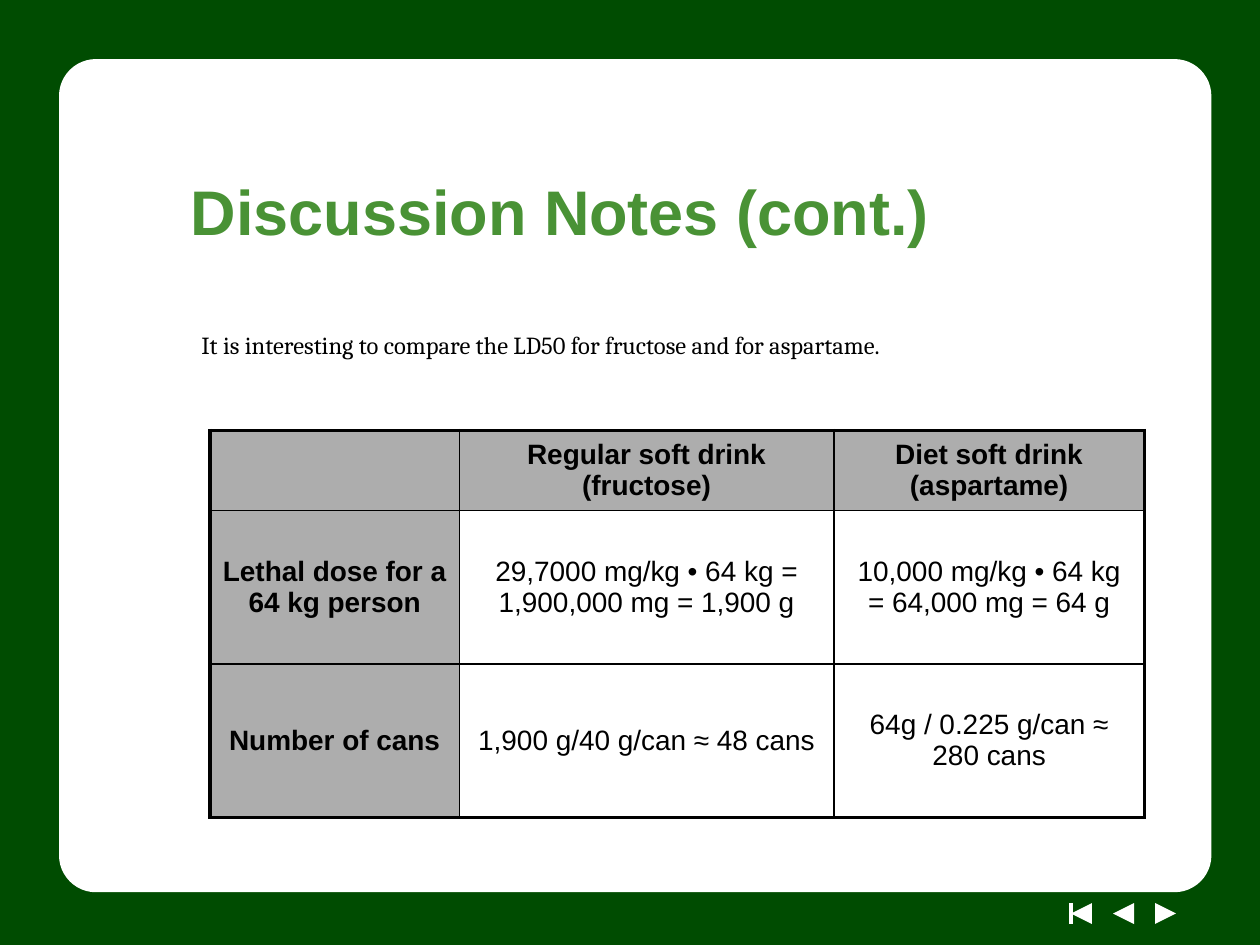
from lxml import etree
from pptx import Presentation
from pptx.dml.color import RGBColor
from pptx.enum import shapes, text
from pptx.oxml import ns
from pptx.util import Pt

GREEN = RGBColor(0x00, 0x4C, 0x01)
TITLE_GREEN = RGBColor(0x49, 0x92, 0x35)
GRAY = RGBColor(0xAD, 0xAD, 0xAD)
WHITE = RGBColor(0xFF, 0xFF, 0xFF)
BLACK = RGBColor(0x00, 0x00, 0x00)

deck = Presentation()
deck.slide_width, deck.slide_height = Pt(720), Pt(540)
page = deck.slides.add_slide(deck.slide_layouts[6])


def add_plain_shape(kind, left, top, width, height, color):
    shape = page.shapes.add_shape(kind, Pt(left), Pt(top), Pt(width), Pt(height))
    shape.shadow.inherit = False
    shape.fill.solid()
    shape.fill.fore_color.rgb = color
    shape.line.fill.background()
    return shape


def add_span(para, words, font, size, color, bold=False):
    span = para.add_run()
    span.text = words
    span.font.name = font
    span.font.size = Pt(size)
    span.font.bold = bold
    span.font.color.rgb = color


add_plain_shape(shapes.MSO_SHAPE.RECTANGLE, 0, 0, 720, 540, GREEN)

for left, rotation in [(660, 90), (636, 270), (612, 270)]:
    arrow = add_plain_shape(shapes.MSO_SHAPE.ISOSCELES_TRIANGLE, left, 516, 12, 12, WHITE)
    arrow.rotation = rotation

bar = page.shapes.add_connector(shapes.MSO_CONNECTOR.STRAIGHT, Pt(612), Pt(516), Pt(612), Pt(528))
bar.line.color.rgb = WHITE
bar.line.width = Pt(2)
etree.SubElement(bar._element.spPr, ns.qn("a:effectLst"))

panel = add_plain_shape(shapes.MSO_SHAPE.ROUNDED_RECTANGLE, 36, 36, 654, 471.6, WHITE)
panel.adjustments[0] = 0.04
panel.line.color.rgb = WHITE
panel.line.width = Pt(4.5)

for words, left, top, width, height, font, size, color, bold in [
    ("Discussion Notes (cont.)", 102, 84, 582, 72, "Arial", 36, TITLE_GREEN, True),
    ("It is interesting to compare the LD50 for fructose and for aspartame.",
     108, 164.4, 540, 64.8, "Cambria", 14, BLACK, False),
]:
    box = page.shapes.add_textbox(Pt(left), Pt(top), Pt(width), Pt(height))
    box.text_frame.word_wrap = True
    box.text_frame.vertical_anchor = text.MSO_ANCHOR.MIDDLE
    add_span(box.text_frame.paragraphs[0], words, font, size, color, bold)

rows = [
    ["", "Regular soft drink (fructose)", "Diet soft drink\n(aspartame)"],
    ["Lethal dose for a 64 kg person", "29,7000 mg/kg • 64 kg = 1,900,000 mg = 1,900 g",
     "10,000 mg/kg • 64 kg = 64,000 mg = 64 g"],
    ["Number of cans", "1,900 g/40 g/can ≈ 48 cans", "64g / 0.225 g/can ≈ 280 cans"],
]
column_widths = [142.5, 214, 177.5]
row_heights = [45.4, 87.8, 87.8]
frame = page.shapes.add_table(3, 3, Pt(120), Pt(246), Pt(sum(column_widths)), Pt(sum(row_heights)))
table = frame.table
table.first_row = table.horz_banding = False
for column, width in zip(table.columns, column_widths):
    column.width = Pt(width)
for row, height in zip(table.rows, row_heights):
    row.height = Pt(height)

for r, row in enumerate(rows):
    for c, words in enumerate(row):
        cell = table.cell(r, c)
        header = r == 0 or c == 0
        cell.fill.solid()
        cell.fill.fore_color.rgb = GRAY if header else WHITE
        cell.vertical_anchor = text.MSO_ANCHOR.MIDDLE
        para = cell.text_frame.paragraphs[0]
        para.alignment = text.PP_ALIGN.CENTER
        for number, line in enumerate(words.split("\n")):
            if number:
                para.add_line_break()
            if line:
                add_span(para, line, "Arial", 16, BLACK, header)
        edges = [("a:lnL", c == 0), ("a:lnR", c == 2), ("a:lnT", r == 0), ("a:lnB", r == 2)]
        properties = cell._tc.get_or_add_tcPr()
        for position, (tag, outer) in enumerate(edges):
            border = etree.Element(ns.qn(tag), w=str(Pt(2.25 if outer else 1)))
            fill = etree.SubElement(border, ns.qn("a:solidFill"))
            etree.SubElement(fill, ns.qn("a:srgbClr"), val=str(BLACK))
            properties.insert(position, border)

deck.save("out.pptx")
